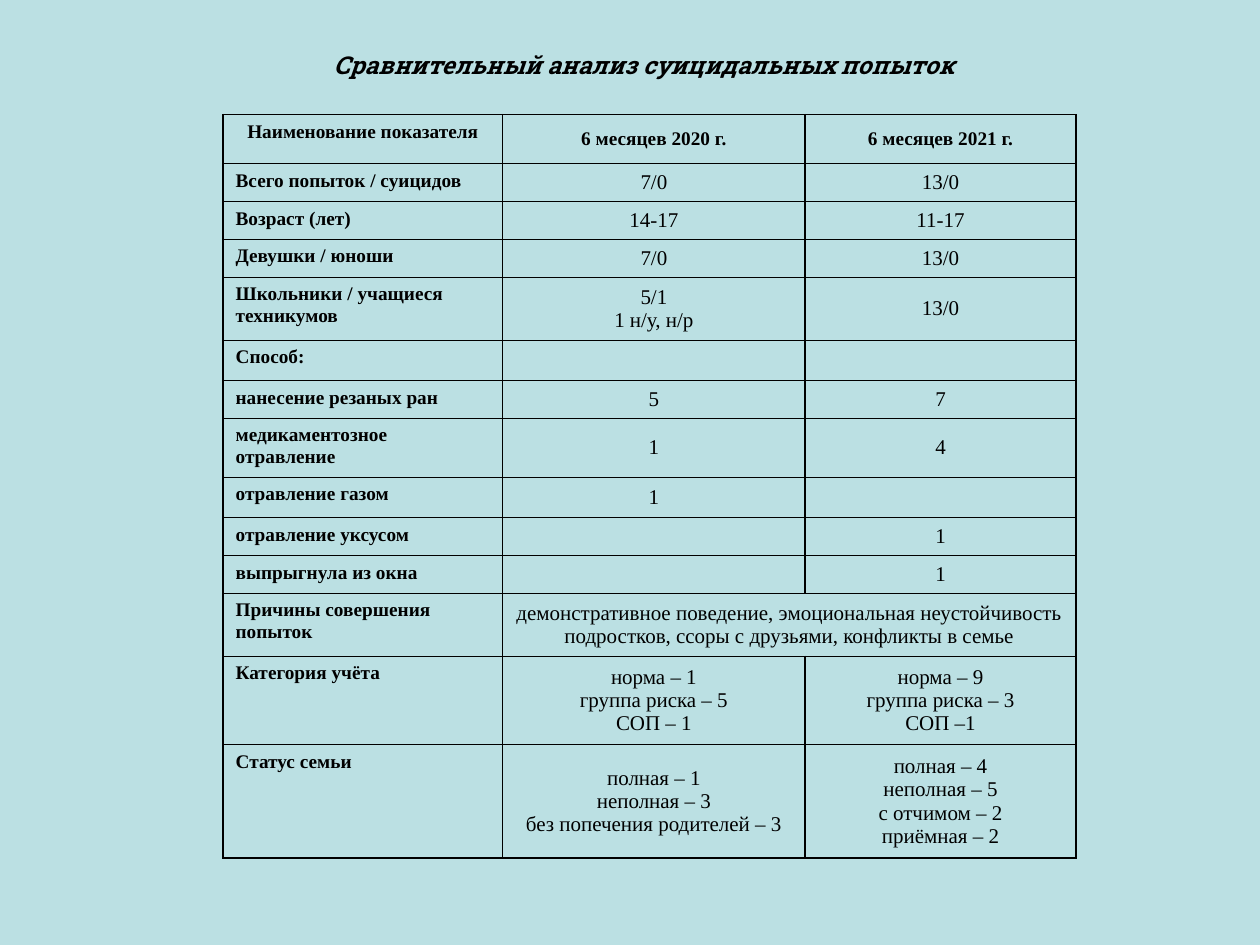
from lxml import etree
from pptx import Presentation
from pptx.dml.color import RGBColor
from pptx.enum.text import MSO_ANCHOR, PP_ALIGN
from pptx.oxml.ns import qn
from pptx.util import Inches, Pt

TOP, MIDDLE = MSO_ANCHOR.TOP, MSO_ANCHOR.MIDDLE
LEFT, CENTER = PP_ALIGN.LEFT, PP_ALIGN.CENTER
BLACK, BACKGROUND = "000000", "BBE0E3"
TITLE_FONT, TABLE_FONT = "Roboto Slab", "Times New Roman"
LABEL_SIZE, VALUE_SIZE = 11, 12
COLUMN_WIDTHS = (2.22, 2.4, 2.15)
REASONS = ("демонстративное поведение, эмоциональная неустойчивость "
           "подростков, ссоры с друзьями, конфликты в семье")
ROWS = (
    (0.39, "Наименование показателя", "6 месяцев 2020 г.", "6 месяцев 2021 г."),
    (0.29, "Всего попыток / суицидов", "7/0", "13/0"),
    (0.29, "Возраст (лет)", "14-17", "11-17"),
    (0.29, "Девушки / юноши", "7/0", "13/0"),
    (0.47, "Школьники / учащиеся техникумов", "5/1\n1 н/у, н/р", "13/0"),
    (0.32, "Способ:", "", ""),
    (0.29, "нанесение резаных ран", "5", "7"),
    (0.45, "медикаментозное отравление", "1", "4"),
    (0.32, "отравление газом", "1", ""),
    (0.29, "отравление уксусом", "", "1"),
    (0.29, "выпрыгнула из окна", "", "1"),
    (0.47, "Причины совершения попыток", REASONS, None),
    (0.65, "Категория учёта", "норма – 1\nгруппа риска – 5\nСОП – 1",
     "норма – 9\nгруппа риска – 3\nСОП –1"),
    (0.84, "Статус семьи", "полная – 1\nнеполная – 3\nбез попечения родителей – 3",
     "полная – 4\nнеполная – 5\nс отчимом – 2\nприёмная – 2"),
)


def color(value):
    """Return the colour of a hex string."""
    return RGBColor.from_string(value)


def write_text(text_frame, text, font_name, size, bold, italic=False, alignment=CENTER):
    """Write text and format each of its paragraphs."""
    text_frame.text = text
    text_frame.word_wrap = True
    for paragraph in text_frame.paragraphs:
        paragraph.alignment = alignment
        for run in paragraph.runs:
            run.font.name = font_name
            run.font.size = Pt(size)
            run.font.bold = bold
            run.font.italic = italic
            run.font.color.rgb = color(BLACK)
        if not paragraph.runs:
            end = etree.SubElement(paragraph._p, qn("a:endParaRPr"))
            end.set("sz", str(size * 100))
            etree.SubElement(end, qn("a:latin")).set("typeface", font_name)


def set_borders(cell):
    """Draw a thin line on all four sides of a cell."""
    properties = cell._tc.get_or_add_tcPr()
    for position, side in enumerate(("lnL", "lnR", "lnT", "lnB")):
        line = etree.Element(qn(f"a:{side}"), w=str(Pt(1)))
        fill = etree.SubElement(line, qn("a:solidFill"))
        etree.SubElement(fill, qn("a:srgbClr")).set("val", BLACK)
        properties.insert(position, line)


def add_title(slide, text):
    """Add the slide title."""
    shape = slide.shapes.add_textbox(Inches(1.06), Inches(0.28), Inches(8.11), Inches(0.47))
    shape.text_frame.vertical_anchor = MIDDLE
    write_text(shape.text_frame, text, TITLE_FONT, 14, True, italic=True)


def fill_cell(cell, text, is_header, is_label):
    """Fill one cell according to its place in the table."""
    cell.fill.background()
    set_borders(cell)
    if text is None:
        return
    cell.vertical_anchor = TOP if is_label else MIDDLE
    bold = is_header or is_label
    write_text(cell.text_frame, text, TABLE_FONT, LABEL_SIZE if bold else VALUE_SIZE, bold,
               alignment=LEFT if is_label and not is_header else CENTER)


def add_comparison_table(slide):
    """Add the table that compares the two periods."""
    height = sum(row[0] for row in ROWS)
    table = slide.shapes.add_table(
        len(ROWS), len(COLUMN_WIDTHS), Inches(1.77), Inches(0.91),
        Inches(sum(COLUMN_WIDTHS)), Inches(height)).table
    table.first_row = table.horz_banding = False
    for column, width in zip(table.columns, COLUMN_WIDTHS):
        column.width = Inches(width)
    for row_index, (row_height, *texts) in enumerate(ROWS):
        table.rows[row_index].height = Inches(row_height)
        for column_index, text in enumerate(texts):
            cell = table.cell(row_index, column_index)
            fill_cell(cell, text, row_index == 0, column_index == 0)
            if text is None:
                table.cell(row_index, column_index - 1).merge(cell)


def main():
    """Build and save the presentation."""
    presentation = Presentation()
    presentation.slide_width, presentation.slide_height = Inches(10), Inches(7.5)
    slide = presentation.slides.add_slide(presentation.slide_layouts[6])
    slide.background.fill.solid()
    slide.background.fill.fore_color.rgb = color(BACKGROUND)
    add_title(slide, "Сравнительный анализ суицидальных попыток")
    add_comparison_table(slide)
    presentation.save("out.pptx")


if __name__ == "__main__":
    main()
